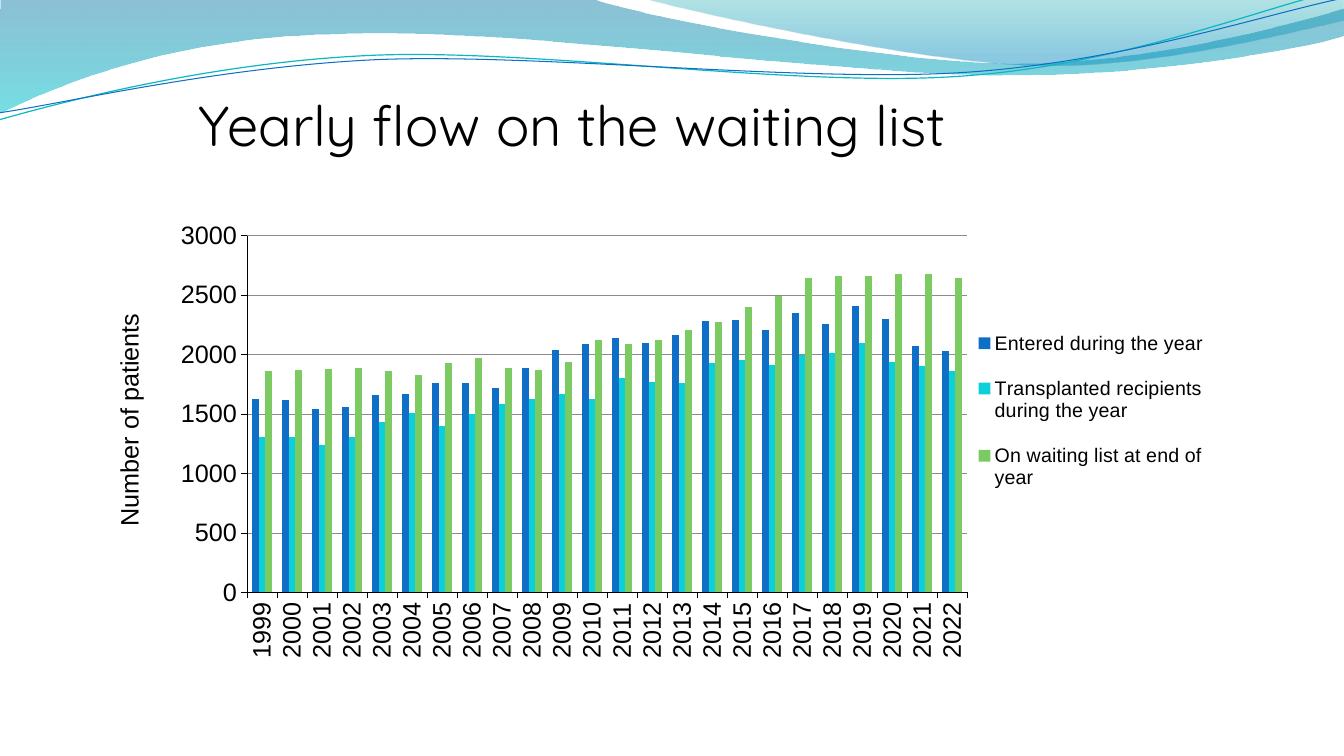
import math

from lxml import etree
from pptx import Presentation
from pptx import util as u
from pptx.chart import data as chart_data
from pptx.dml import color
from pptx.enum import chart as chart_enum
from pptx.oxml import ns

YEARS = [str(year) for year in range(1999, 2023)]
FLOWS = [
    ("Entered during the year", "0F6FC6",
     [1630, 1620, 1540, 1560, 1660, 1670, 1760, 1760, 1720, 1890, 2040, 2090,
      2140, 2100, 2160, 2280, 2290, 2210, 2350, 2260, 2410, 2300, 2070, 2030]),
    ("Transplanted recipients during the year", "0BD0D9",
     [1310, 1310, 1240, 1310, 1430, 1510, 1400, 1500, 1580, 1630, 1670, 1630,
      1800, 1770, 1760, 1930, 1950, 1910, 2000, 2010, 2100, 1940, 1900, 1860]),
    ("On waiting list at end of year", "7CCA62",
     [1860, 1870, 1880, 1890, 1860, 1830, 1930, 1970, 1890, 1870, 1940, 2120,
      2090, 2120, 2210, 2270, 2400, 2490, 2640, 2660, 2660, 2680, 2680, 2640]),
]

LONG_WAVE = [
    (0, 0), (422.6, -0.7),
    (456.5, 12.2, 636.5, 45.4, 727.9, 45.4),
    (818.6, 45.4, 919.4, 18.7, 959.8, 6.5), (960.5, 25.9),
    (943.9, 31.7, 834.5, 54.7, 715.7, 54),
    (596.9, 54, 366.5, 20.2, 247, 24.5),
    (123.8, 25.9, 43.9, 59.8, -1.4, 81.4),
]
SHORT_WAVE = [
    (459.4, -0.7),
    (488.9, 7.9, 654.5, 44.6, 738, 46.8),
    (820.8, 49.7, 923, 23, 959.8, 15.1), (959.8, 0),
]
TEAL_STRAND = [
    (-0.7, 85.7),
    (45.4, 72.7, 151.2, 44.6, 265.7, 39.6),
    (379.4, 34.6, 568.1, 62.6, 683.3, 54.7),
    (799.2, 47.5, 900.7, 5.8, 957.6, -7.2),
]
BLUE_STRAND = [
    (-0.7, 80.6),
    (44.6, 74.2, 157, 47.5, 271.4, 42.5),
    (386.6, 38.2, 573.1, 59, 687.6, 51.8),
    (802.1, 44.6, 903.6, 10.1, 959.8, -1.4),
]
STRAND_CENTER = (479.5, 42)
STRAND_TILT = -2.7


def rgb(hex_string):
    return color.RGBColor.from_string(hex_string)


def format_font(font, size, face, ink="000000", bold=False):
    font.size = u.Pt(size)
    font.name = face
    font.bold = bold
    font.color.rgb = rgb(ink)


def write(frame, words, spacing=None, **style):
    paragraph = frame.paragraphs[0]
    paragraph.line_spacing = spacing
    run = paragraph.add_run()
    run.text = words
    format_font(run.font, **style)


def turn(point, center, degrees):
    angle = math.radians(degrees)
    dx, dy = point[0] - center[0], point[1] - center[1]
    return (center[0] + dx * math.cos(angle) - dy * math.sin(angle),
            center[1] + dx * math.sin(angle) + dy * math.cos(angle))


def draw_curve(slide, left, top, bends, close, tilt=0):
    points = [turn(bend[i:i + 2], STRAND_CENTER, -tilt)
              for bend in bends for i in range(0, len(bend), 2)]
    points = [(u.Pt(left + x), u.Pt(top + y)) for x, y in points]
    builder = slide.shapes.build_freeform(*points[0], scale=1.0)
    builder.add_line_segments(points[1:], close=close)
    curve = builder.convert_to_shape()
    curve.shadow.inherit = False
    curve.rotation = tilt
    segments = iter(list(curve._element.iter(ns.qn("a:lnTo"))))
    for bend in bends[1:]:
        first = next(segments)
        if len(bend) == 6:
            first.tag_name = None
            bezier = etree.Element(ns.qn("a:cubicBezTo"))
            first.addprevious(bezier)
            for segment in (first, next(segments), next(segments)):
                bezier.append(segment[0])
                segment.getparent().remove(segment)
    return curve


def add_wave(slide, left, top, bends, stops):
    wave = draw_curve(slide, left, top, bends, True)
    wave.line.fill.background()
    wave.fill.gradient()
    wave.fill.gradient_angle = 270
    for stop, (position, tint, _) in zip(wave.fill.gradient_stops, stops):
        stop.position = position
        stop.color.rgb = rgb(tint)
    tints = wave._element.spPr.iter(ns.qn("a:srgbClr"))
    for tint, (_, _, opacity) in zip(tints, stops):
        etree.SubElement(tint, ns.qn("a:alpha"), val=str(opacity * 1000))


def add_strand(slide, left, top, bends, ink, weight):
    strand = draw_curve(slide, left, top, bends, False, STRAND_TILT)
    strand.fill.background()
    strand.line.color.rgb = rgb(ink)
    strand.line.width = u.Pt(weight)


def add_banner(slide, left, top):
    add_wave(slide, left, top, LONG_WAVE, [(0, "0074A1", 45), (1, "00C6CF", 55)])
    add_wave(slide, left, top, SHORT_WAVE, [(0, "00A1A9", 30), (0.8, "008BBF", 45)])
    add_strand(slide, left, top, TEAL_STRAND, "0AB8BF", 0.85)
    add_strand(slide, left, top, BLUE_STRAND, "0F6FC6", 0.75)


def add_heading(slide, left, top, width, height):
    heading = slide.shapes.add_textbox(*map(u.Pt, (left, top, width, height)))
    heading.text_frame.word_wrap = True
    write(heading.text_frame, "Yearly flow on the waiting list",
          spacing=0.8, size=40, face="Quicksand")


def place(part, index, **fractions):
    for old in part.findall(ns.qn("c:layout")):
        part.remove(old)
    layout = etree.Element(ns.qn("c:layout"))
    manual = etree.SubElement(layout, ns.qn("c:manualLayout"))
    settings = {"xMode": "edge", "yMode": "edge", **fractions}
    if index == 0:
        settings = {"layoutTarget": "inner", **settings}
    for name, value in settings.items():
        etree.SubElement(manual, ns.qn("c:" + name), val=str(value))
    part.insert(index, layout)


def format_axis(axis):
    axis.major_tick_mark = chart_enum.XL_TICK_MARK.OUTSIDE
    axis.minor_tick_mark = chart_enum.XL_TICK_MARK.NONE
    axis.format.line.color.rgb = rgb("000000")
    axis.format.line.width = u.Pt(0.25)
    format_font(axis.tick_labels.font, 18, "Arial")


def add_flow_chart(slide, left, top, width, height):
    flow_data = chart_data.CategoryChartData()
    flow_data.categories = YEARS
    for name, _, patients in FLOWS:
        flow_data.add_series(name, patients)
    chart = slide.shapes.add_chart(
        chart_enum.XL_CHART_TYPE.COLUMN_CLUSTERED,
        *map(u.Pt, (left, top, width, height)), flow_data).chart
    format_font(chart.font, 18, "Arial")
    chart.has_title = False

    columns = chart.plots[0]
    columns.gap_width = 150
    columns.overlap = 0
    columns.vary_by_categories = False
    for series, (_, tint, _) in zip(columns.series, FLOWS):
        series.format.fill.solid()
        series.format.fill.fore_color.rgb = rgb(tint)

    years, patients = chart.category_axis, chart.value_axis
    format_axis(years)
    format_axis(patients)
    years._element.find(ns.qn("c:txPr")).find(ns.qn("a:bodyPr")).set("rot", "-5400000")
    patients.minimum_scale, patients.maximum_scale = 0, 3000
    patients.major_unit = 500
    patients.major_gridlines.format.line.color.rgb = rgb("8C8C8C")
    patients.major_gridlines.format.line.width = u.Pt(0.5)
    frame = patients.axis_title.text_frame
    write(frame, "Number of patients", size=18, face="Arial")
    frame._txBody.find(ns.qn("a:bodyPr")).set("rot", "-5400000")

    chart.has_legend = True
    chart.legend.position = chart_enum.XL_LEGEND_POSITION.RIGHT
    chart.legend.include_in_layout = False
    format_font(chart.legend.font, 14, "Arial")

    place(chart._chartSpace.chart.plotArea, 0, x=0.126, y=0.075, w=0.639, h=0.704)
    place(patients.axis_title._element, 1, x=2.3 / width, y=0.22)
    place(chart.legend._element, 1, x=0.76, y=0.22, w=0.23, h=0.4)


def main():
    deck = Presentation()
    deck.slide_width, deck.slide_height = u.Pt(960), u.Pt(540)
    slide = deck.slides.add_slide(deck.slide_layouts[6])
    add_banner(slide, 0, 0)
    add_heading(slide, 134.6, 70.6, 606.2, 63.4)
    add_flow_chart(slide, 74.9, 141.1, 805, 362.2)
    deck.save("out.pptx")


if __name__ == "__main__":
    main()
